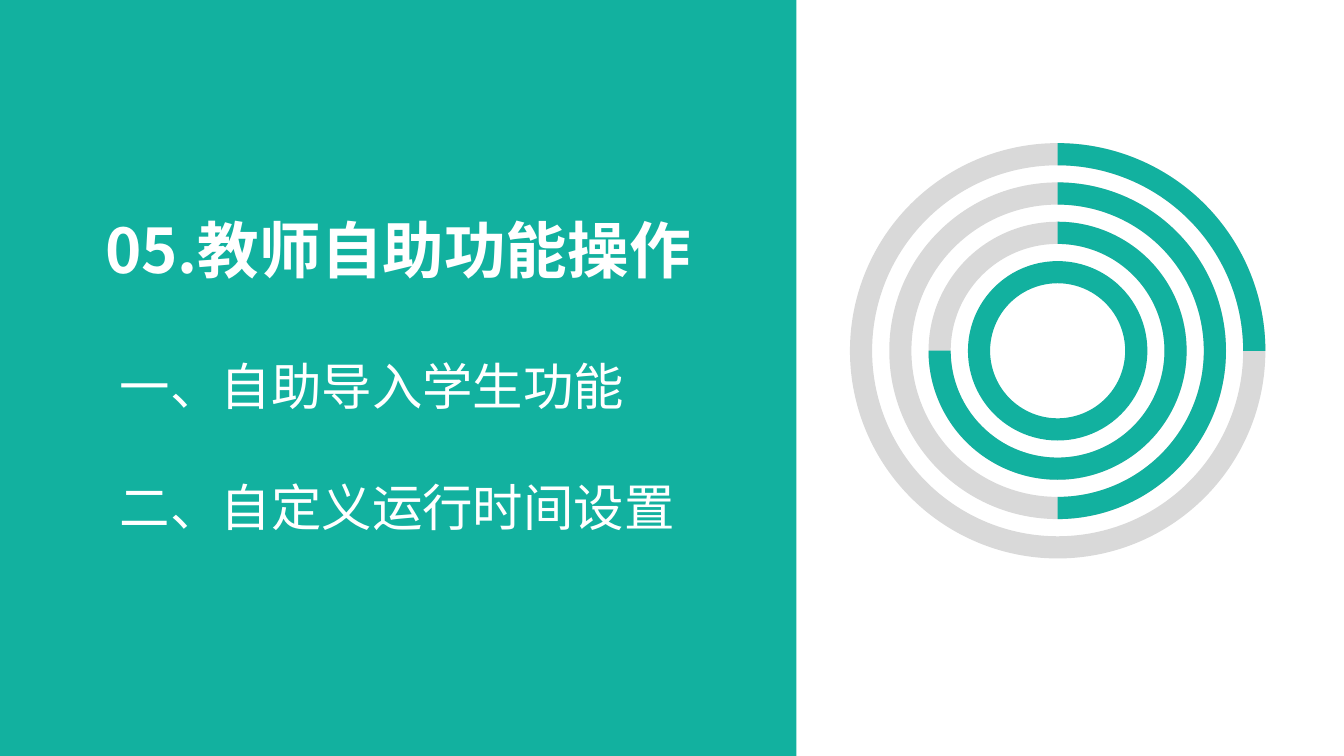
from dataclasses import dataclass

from lxml import etree
from pptx import Presentation
from pptx import util as u
from pptx.dml.color import RGBColor
from pptx.enum import shapes, text
from pptx.oxml.ns import qn

PX = 9144  # EMU per px, 100 px to the inch
TEAL, GREY, WHITE = "12B19F", "D9D9D9", "FFFFFF"
FONT = "Noto Sans CJK SC"
CENTRE_X, CENTRE_Y, RING_WIDTH = 1049, 348, 22
START_ANGLE = 270
ANGLE_UNIT = 0.6  # adjustment value per degree


@dataclass(frozen=True)
class Box:
    left: int
    top: int
    width: int
    height: int

    def emu(self) -> list[int]:
        return [u.Emu(n * PX) for n in (self.left, self.top, self.width, self.height)]


@dataclass(frozen=True)
class Ring:
    radius: int
    quarters: int


@dataclass(frozen=True)
class TextStyle:
    size: int
    line: int
    gap: int
    bold: bool
    align: text.PP_ALIGN


def colour(value: str) -> RGBColor:
    return RGBColor.from_string(value)


def add_filled(slide, kind, box: Box, fill: str):
    shape = slide.shapes.add_shape(kind, *box.emu())
    shape.shadow.inherit = False
    shape.fill.solid()
    shape.fill.fore_color.rgb = colour(fill)
    shape.line.fill.background()
    return shape


def draw_ring(slide, ring: Ring) -> None:
    diameter = 2 * ring.radius
    box = Box(CENTRE_X - ring.radius, CENTRE_Y - ring.radius, diameter, diameter)
    thickness = RING_WIDTH / diameter
    full = ring.quarters == 4
    track = add_filled(slide, shapes.MSO_SHAPE.DONUT, box, TEAL if full else GREY)
    track.adjustments[0] = thickness
    if not full:
        arc = add_filled(slide, shapes.MSO_SHAPE.BLOCK_ARC, box, TEAL)
        end_angle = (START_ANGLE + 90 * ring.quarters) % 360
        arc.adjustments[0] = START_ANGLE * ANGLE_UNIT
        arc.adjustments[1] = end_angle * ANGLE_UNIT
        arc.adjustments[2] = thickness


def fill_placeholder(shape, box: Box, lines: list[str], style: TextStyle) -> None:
    shape.left, shape.top, shape.width, shape.height = box.emu()
    frame = shape.text_frame
    frame.text = "\n".join(lines)
    frame.word_wrap = True
    frame.auto_size = text.MSO_AUTO_SIZE.NONE
    frame.vertical_anchor = text.MSO_ANCHOR.TOP
    for index, paragraph in enumerate(frame.paragraphs):
        paragraph.alignment = style.align
        paragraph.line_spacing = u.Pt(style.line)
        paragraph.space_before = u.Pt(style.gap if index else 0)
        paragraph.space_after = u.Pt(0)
        # No bullet, no hanging indent
        properties = paragraph._p.get_or_add_pPr()
        properties.set("marL", "0")
        properties.set("indent", "0")
        etree.SubElement(properties, qn("a:buNone"))
        for run in paragraph.runs:
            font = run.font
            font.name, font.size, font.bold = FONT, u.Pt(style.size), style.bold
            font.color.rgb = colour(WHITE)
            east_asian = etree.SubElement(run._r.get_or_add_rPr(), qn("a:ea"))
            east_asian.set("typeface", FONT)


def main() -> None:
    presentation = Presentation()
    presentation.slide_width = u.Emu(1333 * PX)
    presentation.slide_height = u.Emu(750 * PX)
    slide = presentation.slides.add_slide(presentation.slide_layouts[1])

    # Teal panel, placed behind the text
    panel = add_filled(slide, shapes.MSO_SHAPE.RECTANGLE, Box(0, 0, 790, 750), TEAL)
    slide.shapes._spTree.insert(2, panel._element)

    # Title and list
    fill_placeholder(
        slide.shapes.title, Box(55, 205, 680, 84), ["05.教师自助功能操作"],
        TextStyle(44, 53, 0, True, text.PP_ALIGN.CENTER),
    )
    fill_placeholder(
        slide.placeholders[1], Box(109, 348, 594, 192),
        ["一、自助导入学生功能", "二、自定义运行时间设置"],
        TextStyle(36, 43, 43, False, text.PP_ALIGN.LEFT),
    )

    # Concentric rings, each filled one quarter more towards the middle
    for quarters in range(1, 5):
        draw_ring(slide, Ring(89 + 39 * (4 - quarters), quarters))

    presentation.save("out.pptx")


if __name__ == "__main__":
    main()
